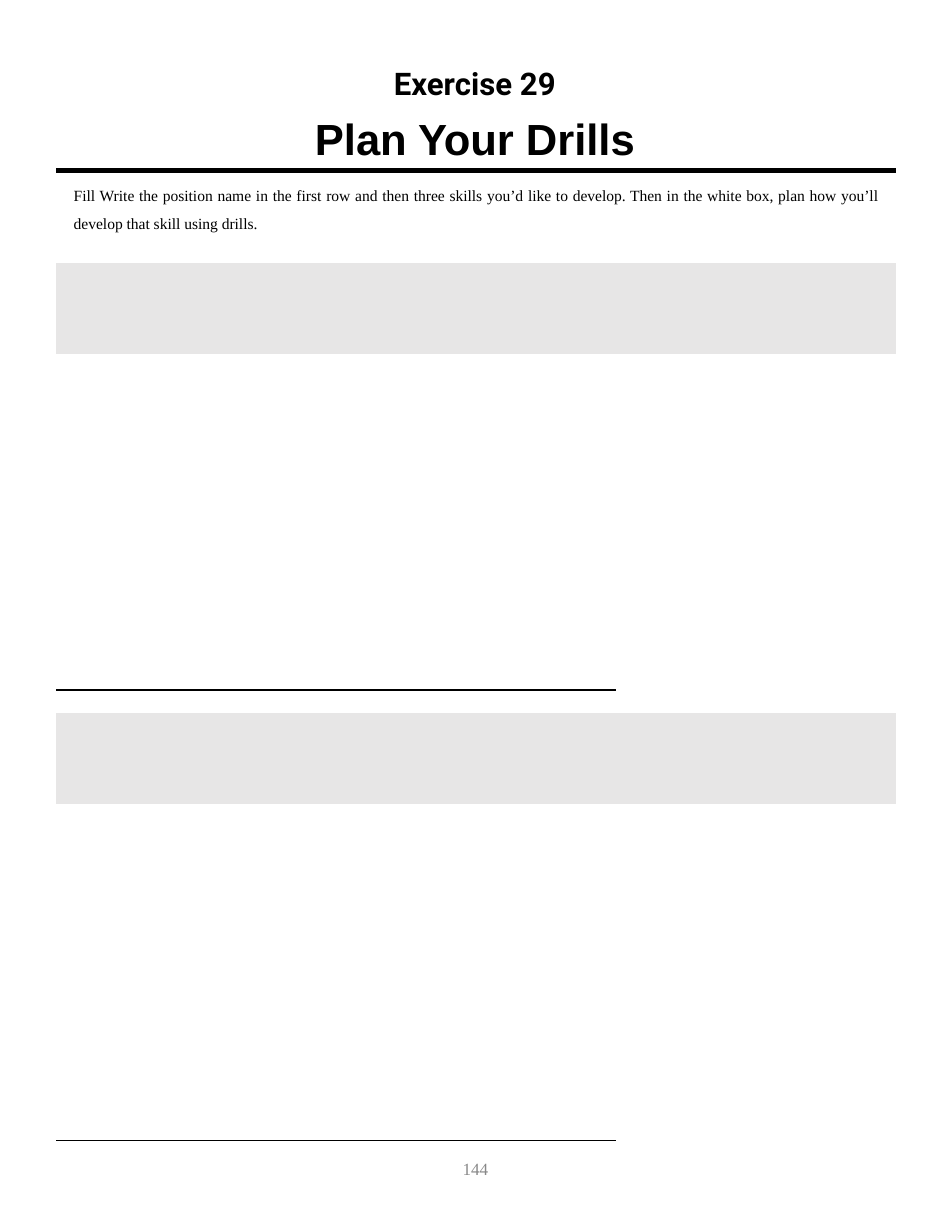
import pptx
import pptx.dml.color
import pptx.enum.shapes
import pptx.enum.text
import pptx.oxml
import pptx.oxml.ns
import pptx.util

RGBColor = pptx.dml.color.RGBColor
Align = pptx.enum.text.PP_ALIGN
Anchor = pptx.enum.text.MSO_ANCHOR

BLACK = RGBColor(0x00, 0x00, 0x00)
GREY = RGBColor(0x88, 0x88, 0x88)
LIGHT_GREY = RGBColor(0xE7, 0xE6, 0xE6)

EMU_PER_PX = 9144  # 100 px to the inch
PAGE_WIDTH, PAGE_HEIGHT = 850, 1100
MARGIN = 50
CONTENT_WIDTH = PAGE_WIDTH - 2 * MARGIN
SKILL_COUNT = 3
HEADER_ROWS = 2
ROW_HEIGHTS = (40, 40, 300)
PLAIN_TABLE_STYLE = "{2D5ABB26-0587-4C30-8999-92F81FD0307C}"


def px(length):
    return pptx.util.Emu(length * EMU_PER_PX)


class Worksheet:
    """Holds the text style and the current slide, and adds elements to it."""

    body_font = "Times New Roman"
    ink = BLACK

    def __init__(self, slide):
        self.slide = slide

    def format_text(self, shape, text, size, font=None, color=None, bold=False,
                    align=Align.CENTER, anchor=Anchor.TOP, line_spacing=None):
        frame = shape.text_frame
        frame.text = text
        frame.word_wrap = True
        frame.auto_size = pptx.enum.text.MSO_AUTO_SIZE.NONE
        frame.vertical_anchor = anchor
        para = frame.paragraphs[0]
        para.alignment = align
        if line_spacing:
            para.line_spacing = line_spacing
        style = para.runs[0].font
        style.name = font or self.body_font
        style.size = pptx.util.Pt(size)
        style.bold = bold
        style.color.rgb = color or self.ink

    def title(self, text, left, top, width, height, **style):
        title = self.slide.shapes.title
        title.left, title.top = px(left), px(top)
        title.width, title.height = px(width), px(height)
        self.format_text(title, text, **style)

    def text(self, text, left, top, width, height, **style):
        box = self.slide.shapes.add_textbox(px(left), px(top), px(width), px(height))
        self.format_text(box, text, **style)

    def rule(self, left, top, width, weight):
        line = self.slide.shapes.add_connector(
            pptx.enum.shapes.MSO_CONNECTOR.STRAIGHT,
            px(left), px(top), px(left + width), px(top))
        line.line.color.rgb = self.ink
        line.line.width = pptx.util.Pt(weight)
        properties = line._element.spPr
        properties.append(properties.makeelement(pptx.oxml.ns.qn("a:effectLst"), {}))

    def bottom_border(self, cell, weight):
        border = pptx.oxml.parse_xml(
            f'<a:lnB {pptx.oxml.ns.nsdecls("a")} w="{pptx.util.Pt(weight)}">'
            f'<a:solidFill><a:srgbClr val="{self.ink}"/></a:solidFill></a:lnB>')
        cell._tc.get_or_add_tcPr().insert(0, border)

    def drill_table(self, left, top, width):
        """Add a position row, a row of skills and a row of open planning space."""
        table = self.slide.shapes.add_table(
            len(ROW_HEIGHTS), SKILL_COUNT, px(left), px(top),
            px(width), px(sum(ROW_HEIGHTS))).table
        table.first_row = table.horz_banding = False
        table._tbl.tblPr.find(pptx.oxml.ns.qn("a:tableStyleId")).text = PLAIN_TABLE_STYLE
        for row, height in zip(table.rows, ROW_HEIGHTS):
            row.height = px(height)
        for row_index in range(len(ROW_HEIGHTS)):
            for column in range(SKILL_COUNT):
                cell = table.cell(row_index, column)
                if row_index < HEADER_ROWS:
                    cell.fill.solid()
                    cell.fill.fore_color.rgb = LIGHT_GREY
                else:
                    cell.fill.background()
                    if column < SKILL_COUNT - 1:
                        self.bottom_border(cell, 1)
        table.cell(0, 0).merge(table.cell(0, SKILL_COUNT - 1))


def main():
    deck = pptx.Presentation()
    deck.slide_width, deck.slide_height = px(PAGE_WIDTH), px(PAGE_HEIGHT)
    page = Worksheet(deck.slides.add_slide(deck.slide_layouts.get_by_name("Title Only")))

    page.title("Plan Your Drills", -1, 95, PAGE_WIDTH, 57,
               size=28, font="Arial", bold=True)
    page.text("Exercise 29", -1, 53, PAGE_WIDTH, 44,
              size=20, font="Roboto", bold=True)
    page.rule(MARGIN, 152, CONTENT_WIDTH, 3)
    page.text("Fill Write the position name in the first row and then three skills "
              "you’d like to develop. Then in the white box, plan how you’ll develop "
              "that skill using drills.",
              56, 153, 738, 61, size=10, align=Align.JUSTIFY, line_spacing=1.5)
    for top in (235, 637):
        page.drill_table(MARGIN, top, CONTENT_WIDTH)
    page.text("144", 329, 1014, 191, 59, size=11, color=GREY, anchor=Anchor.MIDDLE)

    deck.save("out.pptx")


if __name__ == "__main__":
    main()
